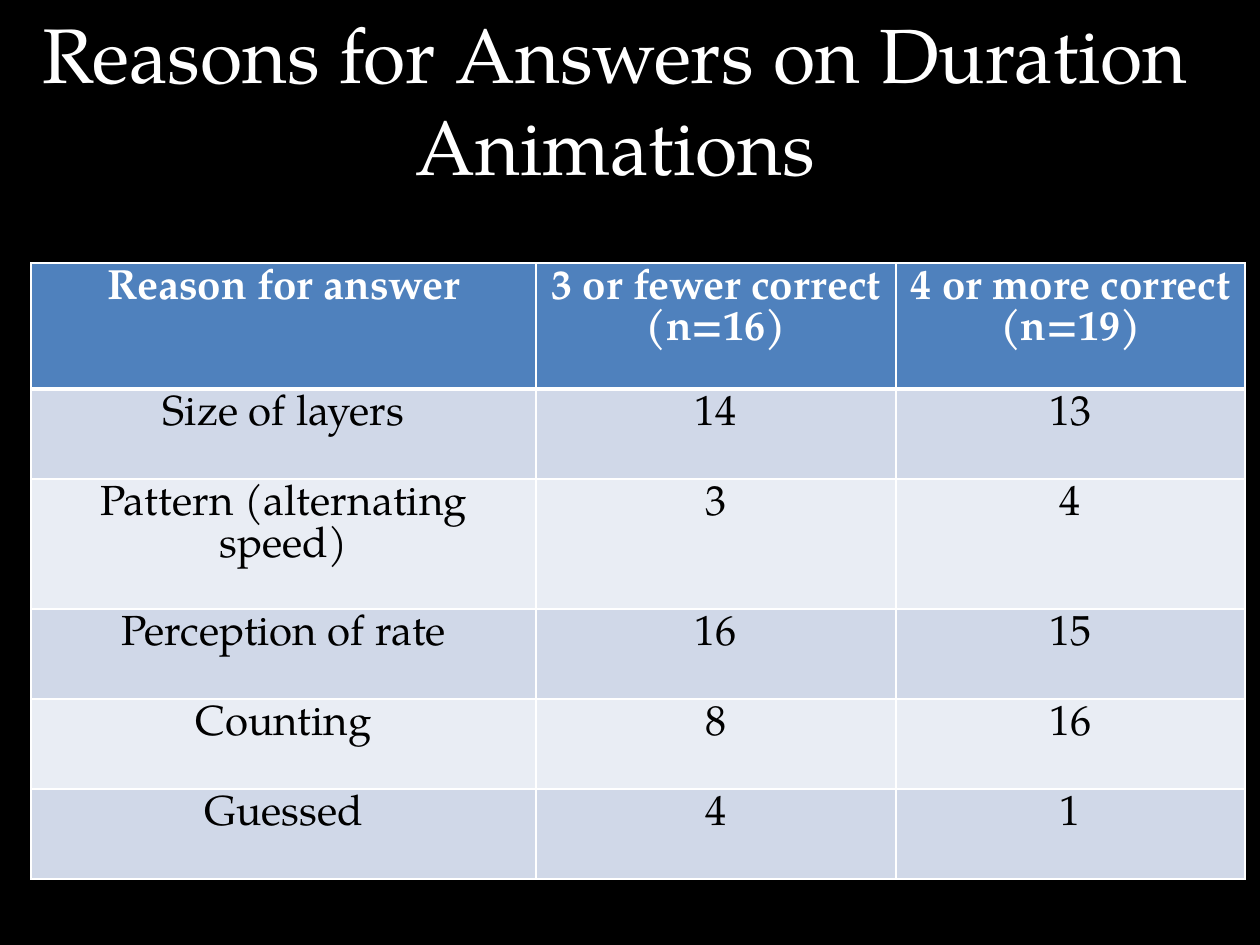
import lxml.etree
import pptx
import pptx.dml.color
import pptx.enum.text
import pptx.oxml.ns
import pptx.util

PX_PER_INCH = 126
FONT = "TeX Gyre Pagella"
WHITE, BLACK = "FFFFFF", "000000"
HEADER_FILL = "4F81BD"
BAND_FILLS = ("D0D8E8", "E9EDF4")


def px(length):
    return pptx.util.Emu(round(length * 914400 / PX_PER_INCH))


def color(hex_string):
    return pptx.dml.color.RGBColor.from_string(hex_string)


class SlideBuilder:
    """Holds the style and the current slide."""

    def __init__(self, slide, font):
        self.slide = slide
        self.font = font

    def background(self, fill):
        self.slide.background.fill.solid()
        self.slide.background.fill.fore_color.rgb = color(fill)

    def add_text(self, paragraph, text, size, ink, bold=False):
        paragraph.alignment = pptx.enum.text.PP_ALIGN.CENTER
        run = paragraph.add_run()
        run.text = text
        run.font.name = self.font
        run.font.size = pptx.util.Pt(size)
        run.font.bold = bold
        run.font.color.rgb = color(ink)

    def title(self, lines, left, top, width, height, size):
        shape = self.slide.shapes.title
        shape.left, shape.top = px(left), px(top)
        shape.width, shape.height = px(width), px(height)
        frame = shape.text_frame
        frame.word_wrap = True
        frame.auto_size = pptx.enum.text.MSO_AUTO_SIZE.NONE
        frame.vertical_anchor = pptx.enum.text.MSO_ANCHOR.TOP
        # Uneven margins centre the text slightly left of the box's middle
        frame.margin_left, frame.margin_right = px(5), px(24)
        for index, line in enumerate(lines):
            paragraph = frame.add_paragraph() if index else frame.paragraphs[0]
            self.add_text(paragraph, line, size, WHITE)

    def cell_borders(self, cell, widths):
        properties = cell._tc.get_or_add_tcPr()
        # Borders come before the fill in the cell properties
        for index, (side, points) in enumerate(widths.items()):
            line = lxml.etree.Element(pptx.oxml.ns.qn(f"a:{side}"),
                                      w=str(pptx.util.Pt(points)))
            fill = lxml.etree.SubElement(line, pptx.oxml.ns.qn("a:solidFill"))
            lxml.etree.SubElement(fill, pptx.oxml.ns.qn("a:srgbClr"), val=WHITE)
            properties.insert(index, line)

    def table(self, rows, left, top, column_widths, row_heights, size):
        table = self.slide.shapes.add_table(
            len(rows), len(column_widths), px(left), px(top),
            px(sum(column_widths)), px(sum(row_heights))).table
        for column, width in zip(table.columns, column_widths):
            column.width = px(width)
        for row, height in zip(table.rows, row_heights):
            row.height = px(height)

        for row_index, values in enumerate(rows):
            header = row_index == 0
            band = BAND_FILLS[(row_index - 1) % len(BAND_FILLS)]
            borders = {"lnL": 1, "lnR": 1,
                       "lnT": 3 if row_index == 1 else 1,
                       "lnB": 3 if header else 1}
            for column_index, value in enumerate(values):
                cell = table.cell(row_index, column_index)
                cell.fill.solid()
                cell.fill.fore_color.rgb = color(HEADER_FILL if header else band)
                self.cell_borders(cell, borders)
                self.add_text(cell.text_frame.paragraphs[0], value, size,
                              WHITE if header else BLACK, bold=header)


def main():
    presentation = pptx.Presentation()
    presentation.slide_width = px(1260)
    presentation.slide_height = px(945)
    slide = presentation.slides.add_slide(presentation.slide_layouts[5])
    builder = SlideBuilder(slide, FONT)
    builder.background(BLACK)

    # Title
    builder.title(["Reasons for Answers on Duration", "Animations"],
                  left=31, top=0, width=1188, height=199, size=44)

    # Reasons by number of correct answers
    reasons = [
        ("Reason for answer", "3 or fewer correct (n=16)", "4 or more correct (n=19)"),
        ("Size of layers", "14", "13"),
        ("Pattern (alternating speed)", "3", "4"),
        ("Perception of rate", "16", "15"),
        ("Counting", "8", "16"),
        ("Guessed", "4", "1"),
    ]
    builder.table(reasons, left=31, top=263, column_widths=[505, 360, 349],
                  row_heights=[126, 90, 130, 90, 90, 90], size=24)

    presentation.save("out.pptx")


if __name__ == "__main__":
    main()
